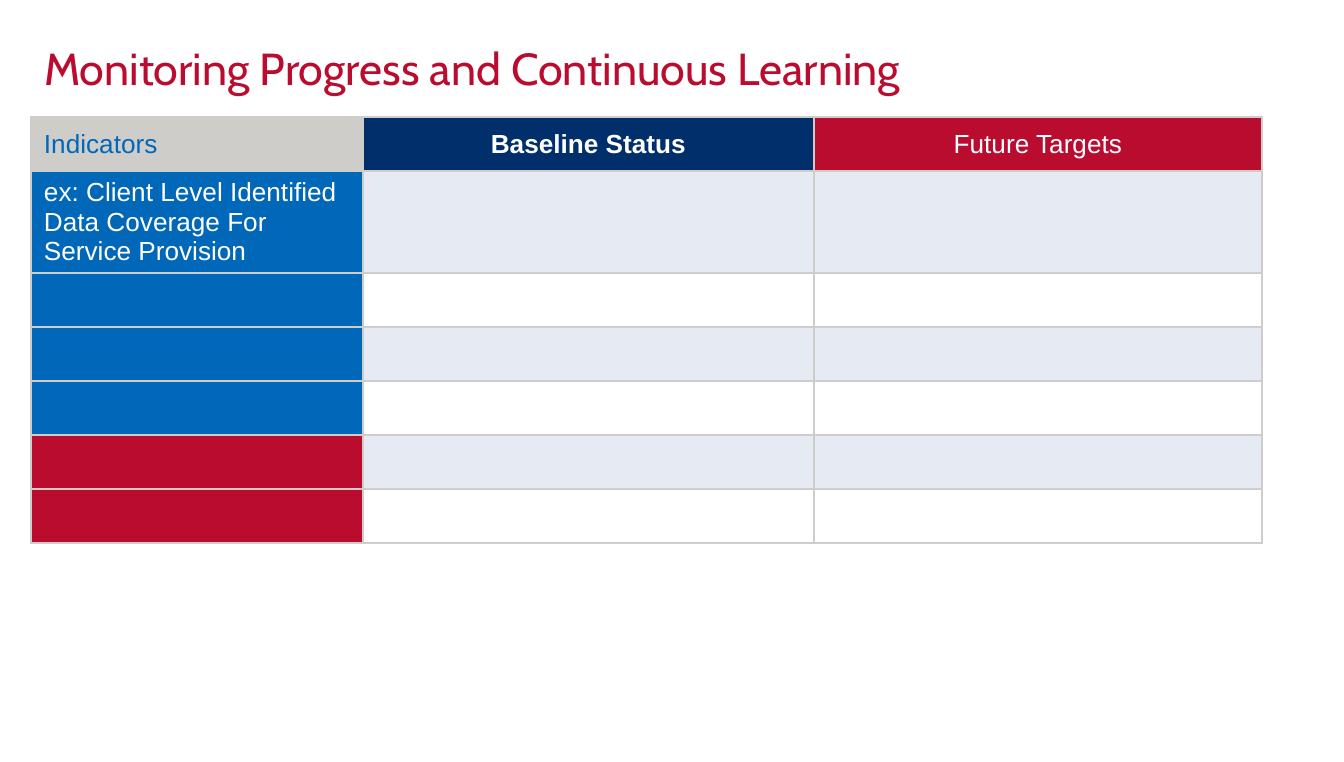
from lxml.etree import SubElement
from pptx import Presentation
from pptx.dml.color import RGBColor
from pptx.enum.text import MSO_ANCHOR as Anchor, MSO_AUTO_SIZE as AutoSize, PP_ALIGN as Align
from pptx.oxml.ns import qn
from pptx.util import Emu, Pt

# Content
TITLE = "Monitoring Progress and Continuous Learning"
# text, fill, font colour, bold, alignment
HEADERS = [
    ("Indicators", "grey", "blue", False, Align.LEFT),
    ("Baseline Status", "navy", "white", True, Align.CENTER),
    ("Future Targets", "red", "white", False, Align.CENTER),
]
# indicator, fill of the indicator cell
INDICATORS = [
    ("ex: Client Level Identified Data Coverage For Service Provision", "blue"),
    ("", "blue"),
    ("", "blue"),
    ("", "blue"),
    ("", "red"),
    ("", "red"),
]
COLORS = {
    "red": "BA0C2F", "blue": "0067B9", "navy": "002F6C",
    "grey": "CFCDC9", "band": "E6EAF3", "white": "FFFFFF",
}

# Layout in px
PX_PER_INCH = 134.4
SLIDE_SIZE = (1344, 762)
TITLE_BOX = (31, 34, 1142, 67)
TABLE_LEFT, TABLE_TOP = 31, 117
COLUMN_WIDTHS = [332, 451, 448]
ROW_HEIGHT, EXAMPLE_HEIGHT = 54, 101
PADDING_X, PADDING_Y = 13, 7
BORDER = Pt(0.75)


def px(length):
    return Emu(round(length * 914400 / PX_PER_INCH))


def rgb(name):
    return RGBColor.from_string(COLORS[name])


def add_run(paragraph, text, font_name, size, color, bold=False):
    run = paragraph.add_run()
    run.text = text
    run.font.name = font_name
    run.font.size = Pt(size)
    run.font.bold = bold
    run.font.color.rgb = rgb(color)


def set_borders(cell):
    properties = cell._tc.get_or_add_tcPr()
    for index, side in enumerate(("lnL", "lnR", "lnT", "lnB")):
        line = SubElement(properties, qn(f"a:{side}"), w=str(BORDER))
        fill = SubElement(line, qn("a:solidFill"))
        SubElement(fill, qn("a:srgbClr"), val=COLORS["grey"])
        properties.insert(index, line)


def format_cell(cell, fill, text="", color="white", bold=False, align=Align.LEFT):
    cell.fill.solid()
    cell.fill.fore_color.rgb = rgb(fill)
    cell.vertical_anchor = Anchor.MIDDLE
    cell.margin_left = cell.margin_right = px(PADDING_X)
    cell.margin_top = cell.margin_bottom = px(PADDING_Y)
    set_borders(cell)
    paragraph = cell.text_frame.paragraphs[0]
    paragraph.alignment = align
    paragraph.font.size = Pt(14)
    if text:
        add_run(paragraph, text, "Arial", 14, color, bold)


def add_title(slide):
    title = slide.shapes.title
    title.left, title.top, title.width, title.height = map(px, TITLE_BOX)
    frame = title.text_frame
    frame.word_wrap = True
    frame.auto_size = AutoSize.NONE
    frame.vertical_anchor = Anchor.MIDDLE
    frame.margin_left = frame.margin_right = px(PADDING_X)
    frame.margin_top = frame.margin_bottom = px(PADDING_X)
    paragraph = frame.paragraphs[0]
    paragraph.alignment = Align.LEFT
    add_run(paragraph, TITLE, "Cabin", 24, "red")


def add_indicator_table(slide):
    heights = [ROW_HEIGHT] + [EXAMPLE_HEIGHT if text else ROW_HEIGHT for text, _ in INDICATORS]
    table = slide.shapes.add_table(
        len(heights), len(COLUMN_WIDTHS), px(TABLE_LEFT), px(TABLE_TOP),
        px(sum(COLUMN_WIDTHS)), px(sum(heights))).table
    for column, width in zip(table.columns, COLUMN_WIDTHS):
        column.width = px(width)
    for row, height in zip(table.rows, heights):
        row.height = px(height)

    # Header row
    for column, (text, fill, color, bold, align) in enumerate(HEADERS):
        format_cell(table.cell(0, column), fill, text, color, bold, align)

    # Indicator rows, banded from the first
    for row, (text, fill) in enumerate(INDICATORS, start=1):
        format_cell(table.cell(row, 0), fill, text)
        for column in range(1, len(COLUMN_WIDTHS)):
            format_cell(table.cell(row, column), "band" if row % 2 else "white")


def main():
    presentation = Presentation()
    presentation.slide_width, presentation.slide_height = map(px, SLIDE_SIZE)
    slide = presentation.slides.add_slide(presentation.slide_layouts[5])
    add_title(slide)
    add_indicator_table(slide)
    presentation.save("out.pptx")


if __name__ == "__main__":
    main()
